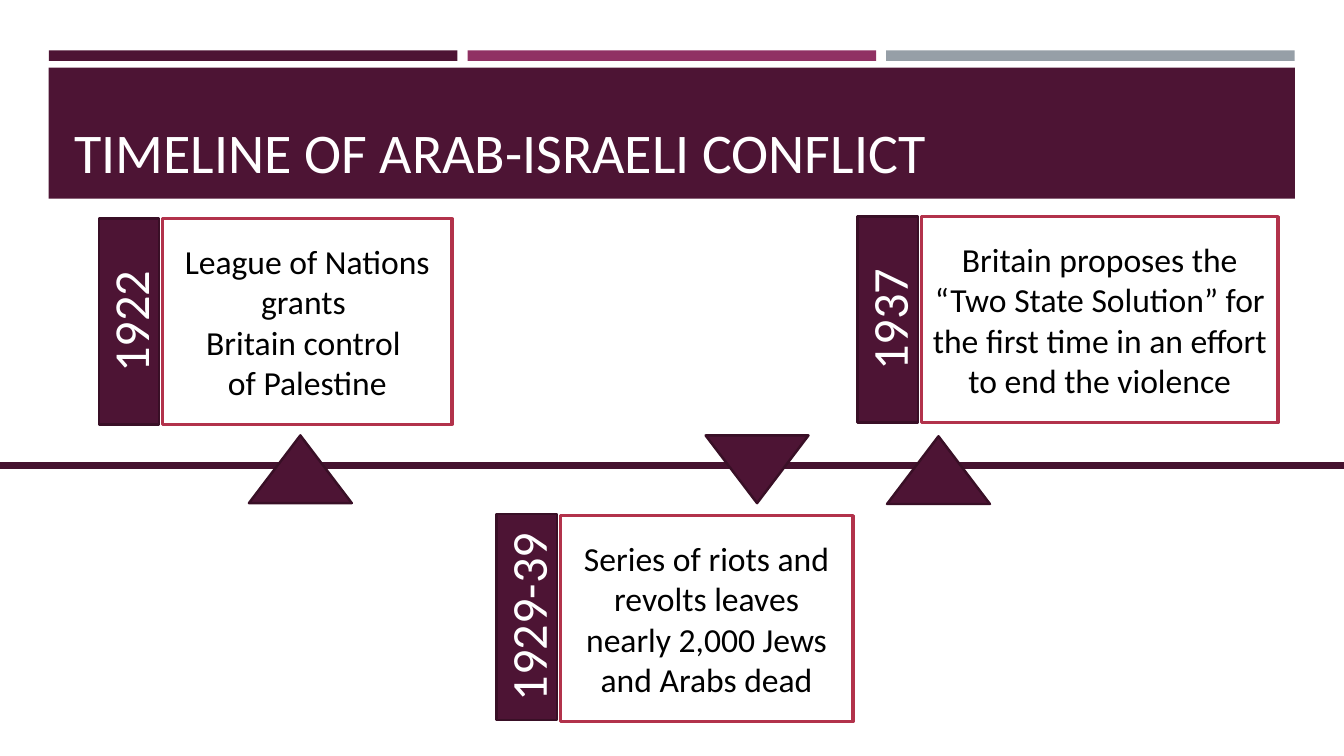
"""Build a timeline slide with dated events above and below a horizontal rail."""
from dataclasses import dataclass

from lxml.etree import SubElement
from pptx import Presentation
from pptx.dml.color import RGBColor
from pptx.enum.shapes import MSO_CONNECTOR, MSO_SHAPE as Preset
from pptx.enum.text import MSO_ANCHOR as Anchor, PP_ALIGN as Align
from pptx.oxml.ns import qn
from pptx.shapes.autoshape import Shape
from pptx.slide import Slide
from pptx.util import Pt


@dataclass(frozen=True)
class Theme:
    font: str = "Calibri"
    plum: str = "4D1434"
    edge: str = "390F26"
    rail: str = "45122F"
    magenta: str = "903163"
    grey: str = "969FA7"
    crimson: str = "B2324B"
    white: str = "FFFFFF"
    black: str = "000000"
    title_size: float = 40
    year_size: float = 36
    body_size: float = 24
    edge_width: float = 1.75
    panel_width: float = 2.5
    rail_width: float = 5


@dataclass(frozen=True)
class Box:
    left: float
    top: float
    width: float
    height: float


@dataclass(frozen=True)
class Event:
    year: str
    lines: tuple[str, ...]
    left: float
    top: float
    panel_width: float
    marker_left: float
    marker_rotation: float = 0
    marker_top: float = 311
    panel_drop: float = 0


THEME = Theme()
SLIDE_WIDTH, SLIDE_HEIGHT = 960, 540
RAIL_TOP = 332.6
TAB_WIDTH, CARD_HEIGHT, PANEL_OFFSET = 43.2, 147, 45.6
MARKER_WIDTH, MARKER_HEIGHT = 73.5, 48.4
STRIPE_LEFT, STRIPE_TOP, STRIPE_STEP = 35, 36, 299
STRIPE_WIDTH, STRIPE_HEIGHT = 291.8, 7.5

EVENTS = (
    Event("1922", ("League of Nations grants ", "Britain control ", "of Palestine"),
          70.6, 156.2, 206.6, 177.8),
    Event("1929-39",
          ("Series of riots and revolts leaves nearly 2,000 Jews and Arabs dead",),
          354.6, 367.2, 209, 504, marker_rotation=180, panel_drop=1.2),
    Event("1937",
          ("Britain proposes the “Two State Solution” for the first time "
           "in an effort to end the violence",),
          612.5, 154.8, 255, 633.6, marker_top=311.6),
)


def color(value: str) -> RGBColor:
    """Turn a hex string into a colour."""
    return RGBColor.from_string(value)


def add_box(slide: Slide, box: Box, fill: str | None = None, line: str | None = None,
            line_width: float = THEME.edge_width, preset: Preset = Preset.RECTANGLE) -> Shape:
    """Draw a flat preset shape."""
    shape = slide.shapes.add_shape(
        preset, Pt(box.left), Pt(box.top), Pt(box.width), Pt(box.height))
    shape.shadow.inherit = False
    if fill:
        shape.fill.solid()
        shape.fill.fore_color.rgb = color(fill)
    else:
        shape.fill.background()
    if line:
        shape.line.color.rgb = color(line)
        shape.line.width = Pt(line_width)
    else:
        shape.line.fill.background()
    return shape


def write(shape: Shape, lines: tuple[str, ...], size: float, ink: str,
          align: Align = Align.CENTER, anchor: Anchor = Anchor.MIDDLE) -> None:
    """Fill a shape with one paragraph per line."""
    frame = shape.text_frame
    frame.word_wrap = True
    frame.vertical_anchor = anchor
    font_format = {"name": THEME.font, "size": Pt(size)}
    for index, line in enumerate(lines):
        paragraph = frame.add_paragraph() if index else frame.paragraphs[0]
        paragraph.alignment = align
        run = paragraph.add_run()
        run.text = line
        for name, value in font_format.items():
            setattr(run.font, name, value)
        run.font.color.rgb = color(ink)


def add_header(slide: Slide) -> None:
    """Draw the three stripes, the banner and the title."""
    for index, fill in enumerate((THEME.plum, THEME.magenta, THEME.grey)):
        add_box(slide, Box(STRIPE_LEFT + index * STRIPE_STEP, STRIPE_TOP,
                           STRIPE_WIDTH, STRIPE_HEIGHT), fill)
    add_box(slide, Box(34.8, 48.4, 890.2, 93.6), THEME.plum)
    title = slide.shapes.add_textbox(Pt(46), Pt(55.4), Pt(868.3), Pt(80))
    write(title, ("TIMELINE OF ARAB-ISRAELI CONFLICT",), THEME.title_size,
          THEME.white, Align.LEFT, Anchor.BOTTOM)


def add_rail(slide: Slide) -> None:
    """Draw the timeline across the full slide."""
    rail = slide.shapes.add_connector(
        MSO_CONNECTOR.STRAIGHT, Pt(0), Pt(RAIL_TOP), Pt(SLIDE_WIDTH), Pt(RAIL_TOP))
    rail.line.color.rgb = color(THEME.rail)
    rail.line.width = Pt(THEME.rail_width)
    SubElement(rail._element.spPr, qn("a:effectLst"))


def add_event(slide: Slide, event: Event) -> None:
    """Draw the panel, year tab and marker of an event."""
    panel = add_box(slide, Box(event.left + PANEL_OFFSET, event.top + event.panel_drop,
                               event.panel_width, CARD_HEIGHT),
                    line=THEME.crimson, line_width=THEME.panel_width)
    write(panel, event.lines, THEME.body_size, THEME.black)
    tab = add_box(slide, Box(event.left, event.top, TAB_WIDTH, CARD_HEIGHT),
                  THEME.plum, THEME.edge)
    write(tab, (event.year,), THEME.year_size, THEME.white)
    tab.text_frame._txBody.bodyPr.set("vert", "vert270")
    marker = add_box(slide, Box(event.marker_left, event.marker_top,
                                MARKER_WIDTH, MARKER_HEIGHT),
                     THEME.plum, THEME.edge, preset=Preset.ISOSCELES_TRIANGLE)
    marker.rotation = event.marker_rotation


def main() -> None:
    """Build and save the presentation."""
    presentation = Presentation()
    presentation.slide_width = Pt(SLIDE_WIDTH)
    presentation.slide_height = Pt(SLIDE_HEIGHT)
    slide = presentation.slides.add_slide(presentation.slide_layouts[6])
    add_header(slide)
    add_rail(slide)
    for event in EVENTS:
        add_event(slide, event)
    presentation.save("out.pptx")


if __name__ == "__main__":
    main()
